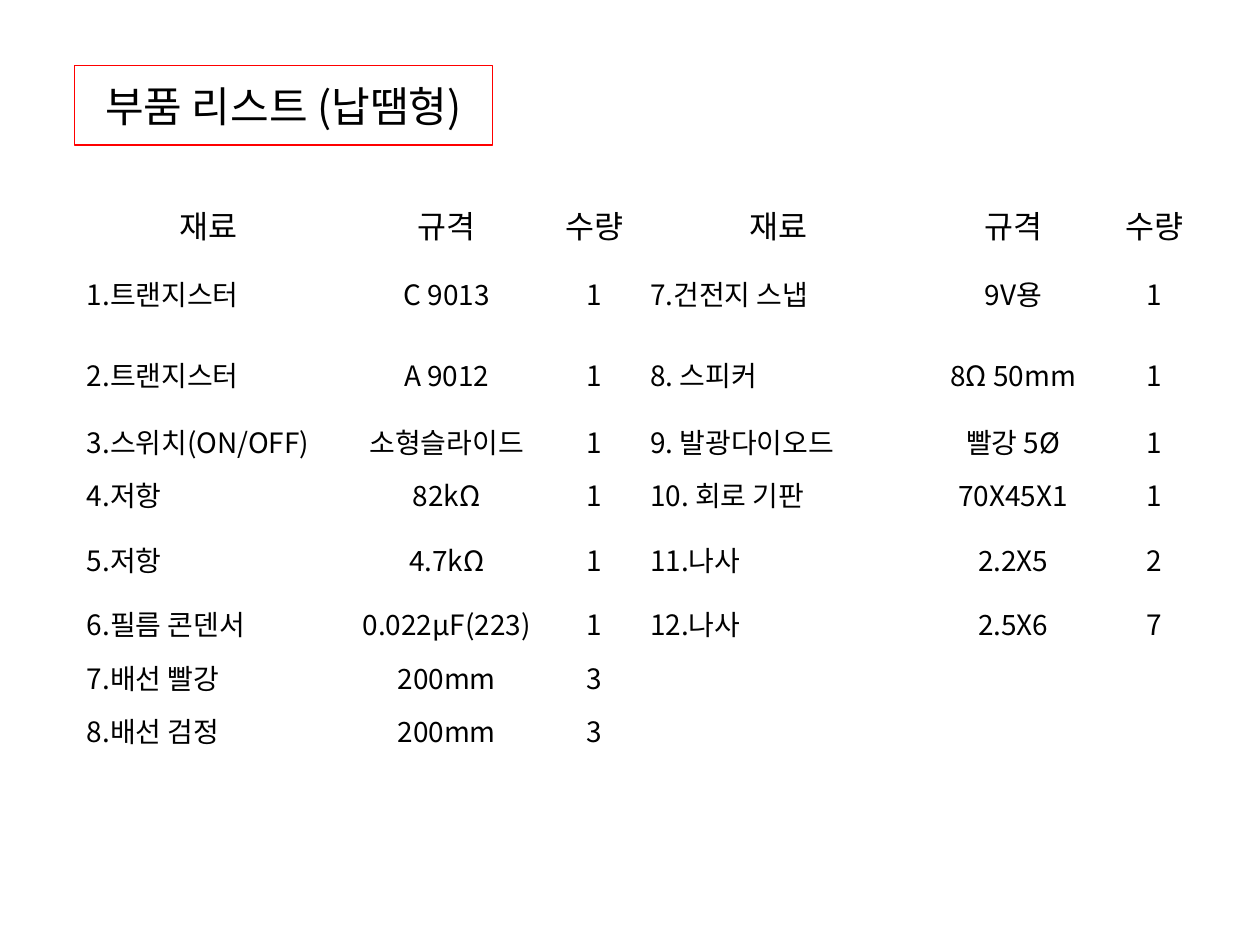
from lxml import etree
from pptx import Presentation
from pptx.dml.color import RGBColor
from pptx.enum import text
from pptx.oxml import ns
from pptx.util import Pt

FONT = "Noto Sans CJK KR"
COLORS = {"text": "000000", "frame": "FF0000"}
NO_STYLE_NO_GRID = "{2D5ABB26-0587-4C30-8999-92F81FD0307C}"


def write(frame, words, size, align=text.PP_ALIGN.CENTER):
    para = frame.paragraphs[0]
    para.alignment = align
    span = para.add_run()
    span.text = words
    span.font.size = Pt(size)
    span.font.name = FONT
    span.font.color.rgb = RGBColor.from_string(COLORS["text"])
    east_asian = etree.SubElement(span.font._element, ns.qn("a:ea"))
    east_asian.set("typeface", FONT)


deck = Presentation()
deck.slide_width, deck.slide_height = Pt(720), Pt(540)
page = deck.slides.add_slide(deck.slide_layouts[5])

title = page.shapes.title
title.left, title.top, title.width, title.height = Pt(42.5), Pt(37.5), Pt(239), Pt(45.4)
title.line.color.rgb = RGBColor.from_string(COLORS["frame"])
title.line.width = Pt(0.75)
title.text_frame.auto_size = text.MSO_AUTO_SIZE.NONE
title.text_frame.word_wrap = False
title.text_frame.vertical_anchor = text.MSO_ANCHOR.MIDDLE
write(title.text_frame, "부품 리스트 (납땜형)", 24)

header = ("재료", "규격", "수량")
parts = [
    header + header,
    ("1.트랜지스터", "C 9013", "1", "7.건전지 스냅", "9V용", "1"),
    ("2.트랜지스터", "A 9012", "1", "8. 스피커", "8Ω 50mm", "1"),
    ("3.스위치(ON/OFF)", "소형슬라이드", "1", "9. 발광다이오드", "빨강 5Ø", "1"),
    ("4.저항", "82kΩ", "1", "10. 회로 기판", "70X45X1", "1"),
    ("5.저항", "4.7kΩ", "1", "11.나사", "2.2X5", "2"),
    ("6.필름 콘덴서", "0.022μF(223)", "1", "12.나사", "2.5X6", "7"),
    ("7.배선 빨강", "200mm", "3", "", "", ""),
    ("8.배선 검정", "200mm", "3", "", "", ""),
]
column_widths = [153.4, 118.8, 49.7, 160.6, 108, 53.3]
row_heights = [33.3, 46, 46, 30.4, 31, 43, 30.4, 30.4, 30.4]

holder = page.shapes.add_table(
    len(parts), len(column_widths), Pt(42.5), Pt(111.6),
    Pt(sum(column_widths)), Pt(sum(row_heights)))
table = holder.table
table.first_row = table.horz_banding = False
table._tbl.tblPr.find(ns.qn("a:tableStyleId")).text = NO_STYLE_NO_GRID

for column, width in zip(table.columns, column_widths):
    column.width = Pt(width)
for row, height in zip(table.rows, row_heights):
    row.height = Pt(height)

for r, entries in enumerate(parts):
    for c, words in enumerate(entries):
        cell = table.cell(r, c)
        cell.fill.background()
        cell.vertical_anchor = text.MSO_ANCHOR.MIDDLE
        if words:
            is_name = r > 0 and c % 3 == 0
            align = text.PP_ALIGN.LEFT if is_name else text.PP_ALIGN.CENTER
            write(cell.text_frame, words, 16 if r else 18, align)

deck.save("out.pptx")
